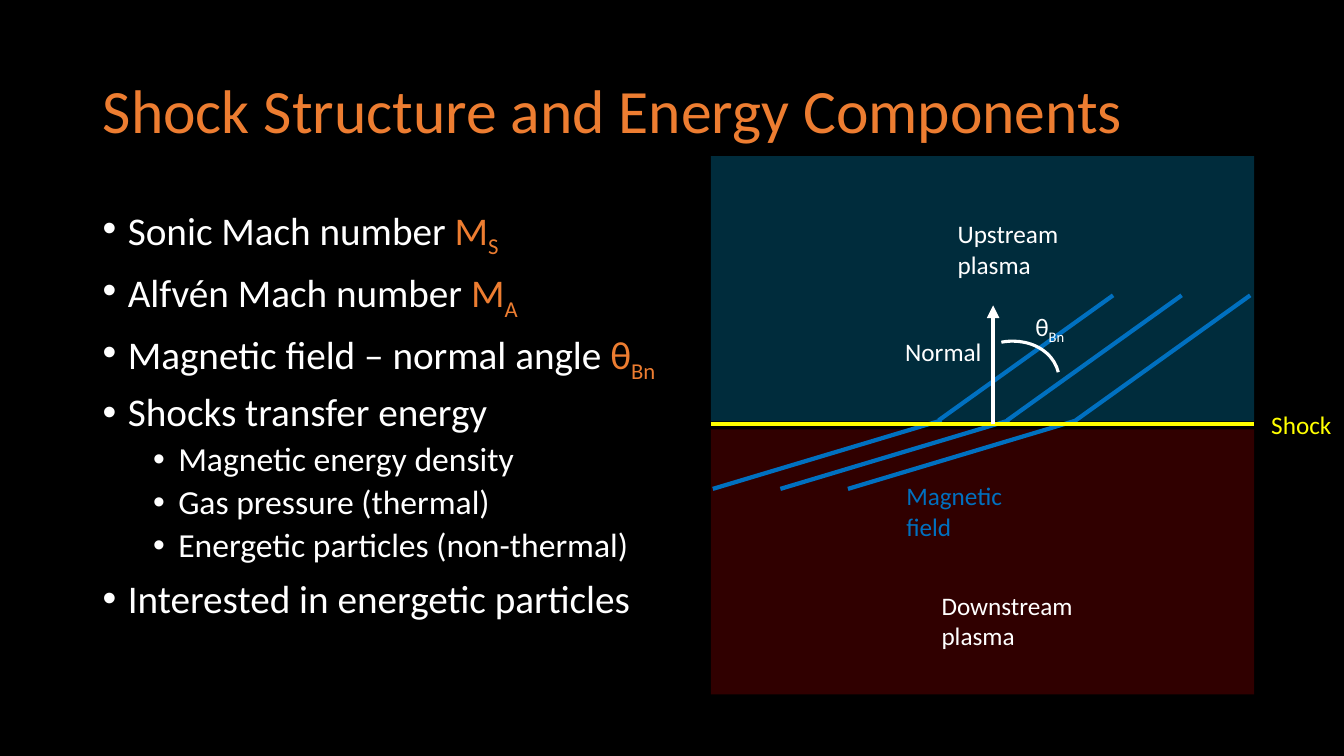
from pptx import Presentation
from pptx.dml.color import RGBColor
from pptx.enum.shapes import MSO_CONNECTOR, MSO_SHAPE
from pptx.enum.text import MSO_ANCHOR, MSO_AUTO_SIZE, PP_ALIGN
from pptx.oxml.ns import qn
from pptx.util import Inches, Pt
from lxml.etree import SubElement

COLORS = {
    "black": "000000", "white": "FFFFFF", "orange": "ED7D31", "yellow": "FFFF00",
    "field": "0070C0", "upstream": "00B0F0", "downstream": "C00000",
}
FONT = "Calibri"
BULLETS = [
    (0, "Sonic Mach number ", "M", "S"),
    (0, "Alfvén Mach number ", "M", "A"),
    (0, "Magnetic field – normal angle ", "θ", "Bn"),
    (0, "Shocks transfer energy", "", ""),
    (1, "Magnetic energy density", "", ""),
    (1, "Gas pressure (thermal)", "", ""),
    (1, "Energetic particles (non-thermal)", "", ""),
    (0, "Interested in energetic particles", "", ""),
]
LEVELS = [
    {"size": 28, "margin": 0.25, "before": 10},
    {"size": 24, "margin": 0.75, "before": 5},
]
LABELS = [
    (12.51, 4.01, 1.01, ["Shock"], "yellow"),
    (8.88, 3.29, 1, ["Normal"], "white"),
    (8.89, 4.72, 1.18, ["Magnetic", "field"], "field"),
    (9.4, 2.12, 1.21, ["Upstream", "plasma"], "white"),
    (9.24, 5.81, 1.6, ["Downstream", "plasma"], "white"),
]


def rgb(name):
    """Return the named colour."""
    return RGBColor.from_string(COLORS[name])


def add_span(para, text, size, color, subscript=False):
    """Append a formatted run to a paragraph."""
    span = para.add_run()
    span.text = text
    for key, value in {"name": FONT, "size": Pt(size)}.items():
        setattr(span.font, key, value)
    span.font.color.rgb = rgb(color)
    if subscript:
        span._r.get_or_add_rPr().set("baseline", "-25000")


def add_textbox(page, left, top, width, height):
    """Add a wrapping text box and return its frame."""
    box = page.shapes.add_textbox(Inches(left), Inches(top), Inches(width), Inches(height))
    box.text_frame.word_wrap = True
    return box.text_frame


def next_para(frame, index):
    """Return the first paragraph, or a new one after it."""
    return frame.add_paragraph() if index else frame.paragraphs[0]


def set_title(page, text):
    """Place and format the slide title."""
    title = page.shapes.title
    box = {"left": 0.92, "top": 0.4, "width": 11.5, "height": 1.45}
    for key, value in box.items():
        setattr(title, key, Inches(value))
    frame = title.text_frame
    frame.auto_size = MSO_AUTO_SIZE.NONE
    frame.vertical_anchor = MSO_ANCHOR.MIDDLE
    para = frame.paragraphs[0]
    para.alignment = PP_ALIGN.LEFT
    para.line_spacing = 0.9
    add_span(para, text, 44, "orange")


def add_bullets(page):
    """Write the bulleted list with its highlighted symbols."""
    frame = add_textbox(page, 0.92, 2, 11.5, 4.76)
    for index, (level, text, symbol, subscript) in enumerate(BULLETS):
        style = LEVELS[level]
        para = next_para(frame, index)
        layout = {"level": level, "line_spacing": 0.9, "space_before": Pt(style["before"])}
        for key, value in layout.items():
            setattr(para, key, value)
        properties = para._p.get_or_add_pPr()
        properties.set("marL", str(Inches(style["margin"])))
        properties.set("indent", str(Inches(-0.25)))
        SubElement(properties, qn("a:buFont")).set("typeface", "Arial")
        SubElement(properties, qn("a:buChar")).set("char", "•")
        add_span(para, text, style["size"], "white")
        if symbol:
            add_span(para, symbol, style["size"], "orange")
            add_span(para, subscript, style["size"], "orange", True)


def add_label(page, left, top, width, lines, color):
    """Add a diagram label with one paragraph for each line."""
    frame = add_textbox(page, left, top, width, 0.1 + 0.3 * len(lines))
    for index, text in enumerate(lines):
        add_span(next_para(frame, index), text, 18, color)


def add_region(page, top, color):
    """Add a translucent plasma region."""
    region = page.shapes.add_shape(
        MSO_SHAPE.RECTANGLE, Inches(7.05), Inches(top), Inches(5.39), Inches(2.63))
    region.shadow.inherit = False
    region.fill.solid()
    region.fill.fore_color.rgb = rgb(color)
    tint = region.fill._xPr.find(".//" + qn("a:srgbClr"))
    SubElement(tint, qn("a:alpha")).set("val", "25000")
    region.line.fill.background()


def add_line(page, start, end, color, arrow=False):
    """Draw a straight line, optionally with an arrowhead at its end."""
    line = page.shapes.add_connector(
        MSO_CONNECTOR.STRAIGHT, *[Inches(value) for value in (*start, *end)])
    line.line.color.rgb = rgb(color)
    line.line.width = Pt(3)
    if arrow:
        SubElement(line.line._get_or_add_ln(), qn("a:tailEnd")).set("type", "triangle")
    SubElement(line._element.spPr, qn("a:effectLst"))


def add_angle(page):
    """Draw the arc between the normal and the field, with its symbol."""
    arc = page.shapes.add_shape(
        MSO_SHAPE.ARC, Inches(9.49), Inches(3.39), Inches(1.02), Inches(0.84))
    arc.shadow.inherit = False
    arc.rotation = 346.7
    arc.adjustments[0] = 164.37
    arc.adjustments[1] = 0
    arc.fill.background()
    arc.line.color.rgb = rgb("white")
    arc.line.width = Pt(2.25)
    para = add_textbox(page, 10.17, 3.04, 0.6, 0.4).paragraphs[0]
    add_span(para, "θ", 18, "white")
    add_span(para, "Bn", 18, "white", True)


def add_diagram(page):
    """Draw the shock with its plasma regions and magnetic field."""
    add_region(page, 1.55, "upstream")
    add_region(page, 4.26, "downstream")
    for index in range(3):
        shift = 0.68 * index
        add_line(page, (9.31 + shift, 4.17), (11.04 + shift, 2.93), "field")
    for index in range(3):
        shift = 0.67 * index
        add_line(page, (7.07 + shift, 4.85), (9.34 + shift, 4.17), "field")
    add_line(page, (7.05, 4.21), (12.44, 4.21), "yellow")
    add_angle(page)
    for label in LABELS:
        add_label(page, *label)
    add_line(page, (9.85, 4.21), (9.85, 3.03), "white", arrow=True)


def main():
    """Build and save the slide."""
    deck = Presentation()
    deck.slide_width, deck.slide_height = Inches(13.33), Inches(7.5)
    page = deck.slides.add_slide(deck.slide_layouts[5])
    page.background.fill.solid()
    page.background.fill.fore_color.rgb = rgb("black")
    set_title(page, "Shock Structure and Energy Components")
    add_diagram(page)
    add_bullets(page)
    deck.save("out.pptx")


if __name__ == "__main__":
    main()
